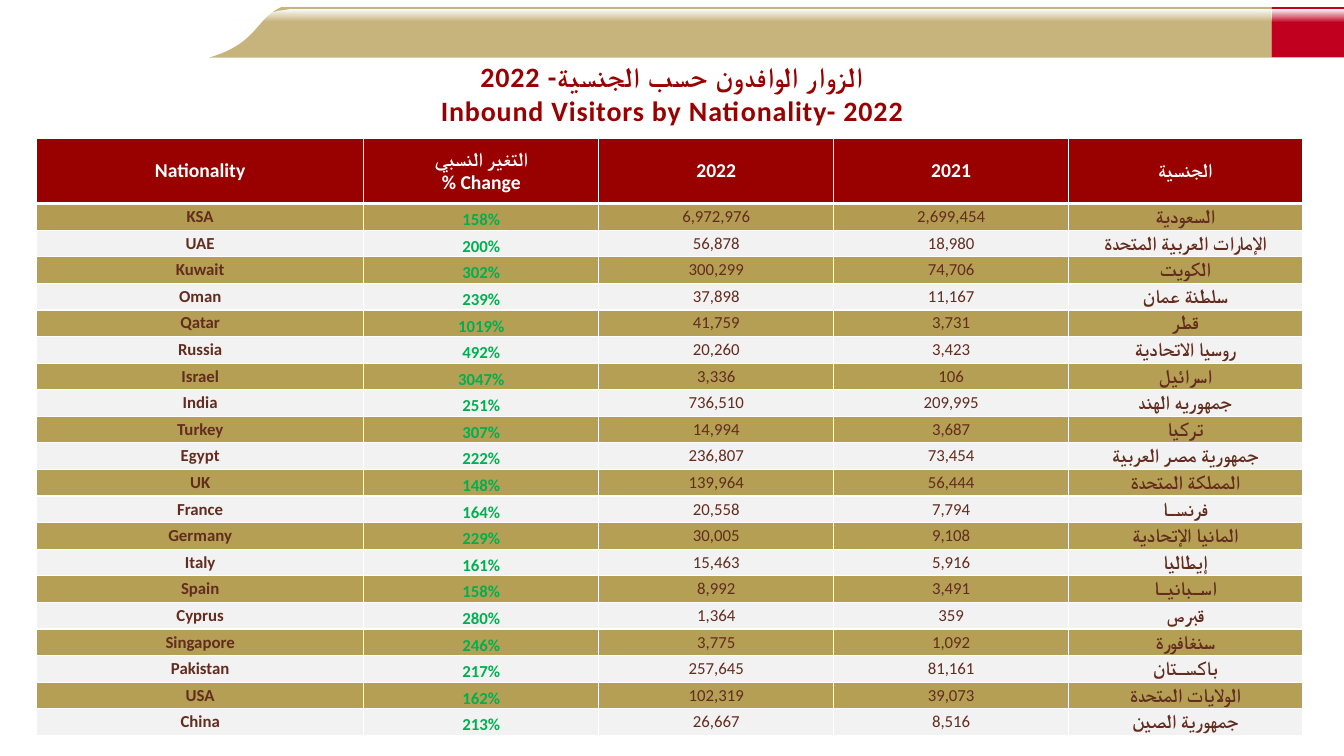
from dataclasses import dataclass

from lxml import etree
from pptx import Presentation
from pptx.dml.color import RGBColor
from pptx.enum.shapes import MSO_SHAPE
from pptx.enum.text import MSO_ANCHOR, PP_ALIGN
from pptx.oxml.ns import qn
from pptx.util import Cm, Pt

RECT = MSO_SHAPE.RECTANGLE
MIDDLE, BOTTOM = MSO_ANCHOR.MIDDLE, MSO_ANCHOR.BOTTOM
CENTER = PP_ALIGN.CENTER


@dataclass(frozen=True)
class Theme:
    font: str = "Calibri"
    white: str = "FFFFFF"
    sand: str = "C6B47C"
    red: str = "C1001F"
    maroon: str = "990000"
    brown: str = "622C1F"
    green: str = "00B050"
    first: str = "B39C51"
    gold: str = "B59F54"
    pale: str = "F2F2F2"
    title: int = 20
    head: int = 14
    body: int = 12


class Deck:
    def __init__(self, theme):
        self.theme = theme
        self.prs = Presentation()
        self.prs.slide_width, self.prs.slide_height = Cm(33.87), Cm(19.05)
        self.slide = self.prs.slides.add_slide(self.prs.slide_layouts[6])

    def paint(self, shape, color):
        """Fill with a colour, or with a white fade when color is None."""
        shape.shadow.inherit = False
        shape.line.fill.background()
        if color:
            shape.fill.solid()
            shape.fill.fore_color.rgb = RGBColor.from_string(color)
            return
        shape.fill.gradient()
        shape.fill.gradient_angle = 270
        for stop in shape.fill.gradient_stops:
            stop.color.rgb = RGBColor.from_string(self.theme.white)
        last = shape.element.spPr.findall(".//" + qn("a:srgbClr"))[-1]
        etree.SubElement(last, qn("a:alpha"), val="0")

    def rect(self, x, y, w, h, color=None):
        self.paint(self.slide.shapes.add_shape(RECT, Cm(x), Cm(y), Cm(w), Cm(h)), color)

    def swoosh(self, curve, right, color=None):
        """Band whose left edge is a cubic curve from bottom to top."""
        steps = 24
        edge = []
        for n in range(steps + 1):
            t = n / steps
            mix = ((1 - t) ** 3, 3 * t * (1 - t) ** 2, 3 * t * t * (1 - t), t ** 3)
            edge.append([Cm(sum(m * p[k] for m, p in zip(mix, curve))) for k in (0, 1)])
        low, top = edge[0][1], edge[-1][1]
        pen = self.slide.shapes.build_freeform(*edge[0])
        pen.add_line_segments(edge[1:] + [(Cm(right), top), (Cm(right), low)])
        self.paint(pen.convert_to_shape(), color)

    def run(self, para, text, size, color, bold=True):
        para.alignment = CENTER
        run = para.add_run()
        run.text = text
        font = run.font
        font.name, font.size, font.bold = self.theme.font, Pt(size), bold
        font.color.rgb = RGBColor.from_string(color)
        etree.SubElement(run._r.get_or_add_rPr(), qn("a:cs"), typeface=self.theme.font)
        return run

    def title(self, x, y, w, h, lines):
        frame = self.slide.shapes.add_textbox(Cm(x), Cm(y), Cm(w), Cm(h)).text_frame
        frame.word_wrap = True
        frame.vertical_anchor = MIDDLE
        para = frame.paragraphs[0]
        para._p.get_or_add_pPr().set("rtl", "1")
        for n, line in enumerate(lines):
            if n:
                para.add_line_break()
            run = self.run(para, line, self.theme.title, self.theme.maroon)
            run._r.get_or_add_rPr().set("spc", "60")

    def cell(self, cell, fill, top=1, base=1, anchor=MIDDLE):
        cell.fill.solid()
        cell.fill.fore_color.rgb = RGBColor.from_string(fill)
        cell.vertical_anchor = anchor
        props = cell._tc.get_or_add_tcPr()
        for n, (side, width) in enumerate(zip("LRTB", (1, 1, top, base))):
            line = etree.Element(qn("a:ln" + side), w=str(Pt(width)))
            solid = etree.SubElement(line, qn("a:solidFill"))
            etree.SubElement(solid, qn("a:srgbClr"), val=self.theme.white)
            props.insert(n, line)

    def table(self, x, y, widths, tall, high, heads, rows):
        look = self.theme
        size = (len(rows) + 1, len(heads))
        grid = self.slide.shapes.add_table(
            *size, Cm(x), Cm(y), Cm(sum(widths)), Cm(tall + high * len(rows))).table
        grid.horz_banding = False
        for col, width in zip(grid.columns, widths):
            col.width = Cm(width)
        for n, row in enumerate(grid.rows):
            row.height = Cm(high if n else tall)

        # Header row
        for c, lines in enumerate(heads):
            cell = grid.cell(0, c)
            self.cell(cell, look.maroon, base=3)
            for n, line in enumerate(lines):
                frame = cell.text_frame
                para = frame.add_paragraph() if n else frame.paragraphs[0]
                if len(lines) > 1 and n == 0:
                    para._p.get_or_add_pPr().set("rtl", "1")
                self.run(para, line, look.head, look.white)

        # Body: size, colour, weight and anchor by column
        number = (look.body, look.brown, False, MIDDLE)
        styles = ((look.body, look.brown, True, MIDDLE),
                  (look.body, look.green, True, BOTTOM),
                  number, number,
                  (look.head, look.brown, True, MIDDLE))
        for r, row in enumerate(rows, 1):
            fill = look.first if r == 1 else look.gold if r % 2 else look.pale
            for c, (text, (pts, color, bold, anchor)) in enumerate(zip(row, styles)):
                cell = grid.cell(r, c)
                cell.margin_left = cell.margin_right = 0
                cell.margin_top = cell.margin_bottom = 0
                self.cell(cell, fill, top=3 if r == 1 else 1, anchor=anchor)
                self.run(cell.text_frame.paragraphs[0], text, pts, color, bold)


HEADS = (("Nationality",), ("التغير النسبي", "% Change"), ("2022",), ("2021",), ("الجنسية",))
ROWS = (
    ("KSA", "158%", "6,972,976", "2,699,454", "السعودية"),
    ("UAE", "200%", "56,878", "18,980", "الإمارات العربية المتحدة"),
    ("Kuwait", "302%", "300,299", "74,706", "الكويت"),
    ("Oman", "239%", "37,898", "11,167", "سلطنة عمان"),
    ("Qatar", "1019%", "41,759", "3,731", "قطر"),
    ("Russia", "492%", "20,260", "3,423", "روسيا الاتحادية"),
    ("Israel", "3047%", "3,336", "106", "اسرائيل"),
    ("India", "251%", "736,510", "209,995", "جمهوريه الهند"),
    ("Turkey", "307%", "14,994", "3,687", "تركيا"),
    ("Egypt", "222%", "236,807", "73,454", "جمهورية مصر العربية"),
    ("UK", "148%", "139,964", "56,444", "المملكة المتحدة"),
    ("France", "164%", "20,558", "7,794", "فرنسـا"),
    ("Germany", "229%", "30,005", "9,108", "المانيا الإتحادية"),
    ("Italy", "161%", "15,463", "5,916", "إيطاليا"),
    ("Spain", "158%", "8,992", "3,491", "اسـبانيـا"),
    ("Cyprus", "280%", "1,364", "359", "قبرص"),
    ("Singapore", "246%", "3,775", "1,092", "سنغافورة"),
    ("Pakistan", "217%", "257,645", "81,161", "باكسـتان"),
    ("USA", "162%", "102,319", "39,073", "الولايات المتحدة"),
    ("China", "213%", "26,667", "8,516", "جمهورية الصين"),
)


def main():
    theme = Theme()
    deck = Deck(theme)

    # Top band with its gloss
    split = 32.05
    deck.swoosh(((5.28, 1.45), (6.5, 1.09), (6.43, 0.48), (7.09, 0.18)), split, theme.sand)
    deck.rect(split, 0.18, 1.82, 1.27, theme.red)
    deck.swoosh(((5.51, 0.53), (6.71, 0.43), (6.63, 0.3), (7.29, 0.23)), split)
    deck.rect(split, 0.23, 1.82, 0.32)

    # Title
    deck.title(1.7, 0.76, 30.48, 3.18,
               ("الزوار الوافدون حسب الجنسية- 2022", "Inbound Visitors by Nationality- 2022"))

    # Visitors by nationality
    deck.table(0.92, 3.5, (8.25, 5.92, 5.92, 5.92, 5.89), 1.63, 0.67, HEADS, ROWS)

    deck.prs.save("out.pptx")


if __name__ == "__main__":
    main()
